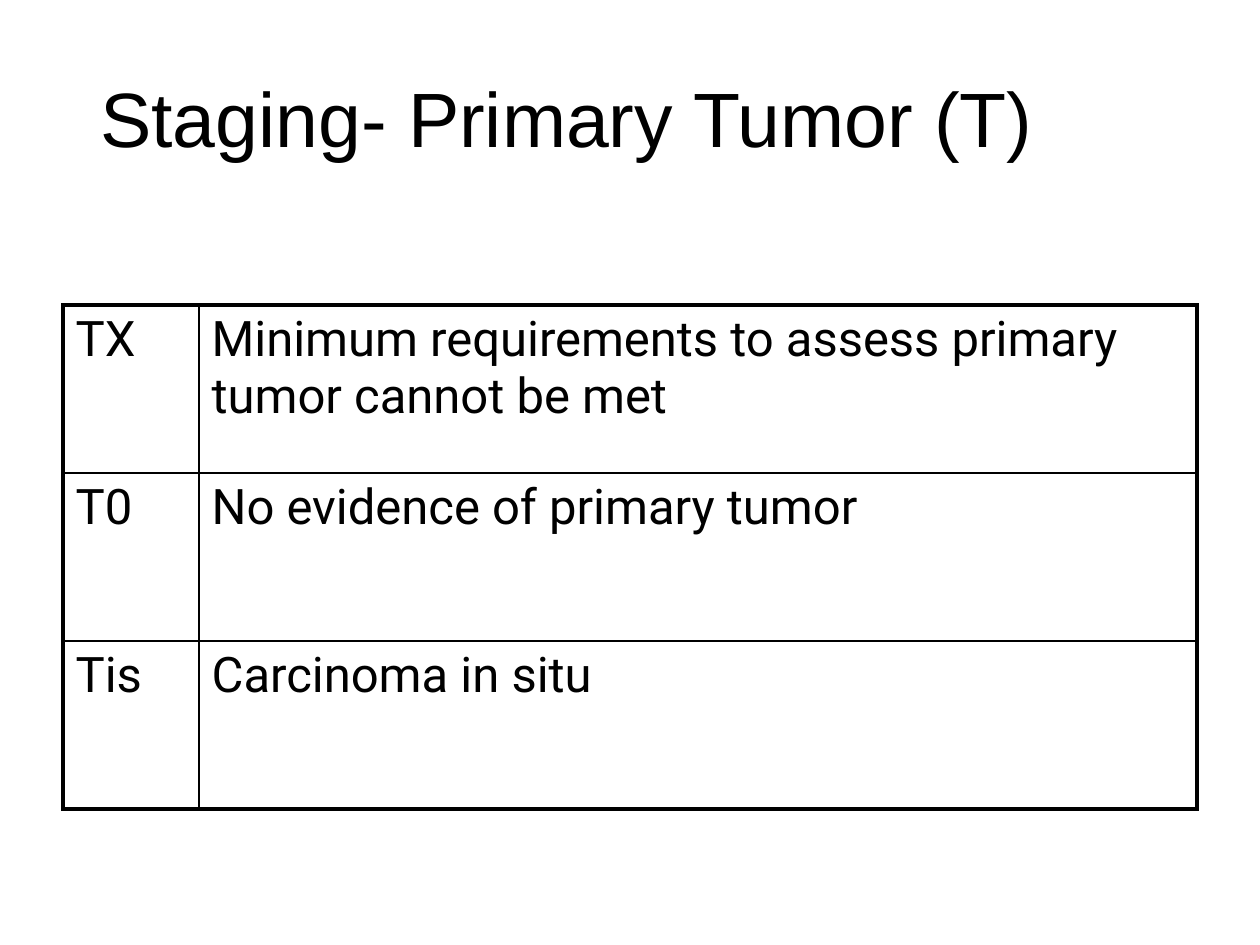
"""Build the slide on primary tumor staging."""
from lxml.etree import SubElement
from pptx import Presentation
from pptx.dml.color import RGBColor
from pptx.enum.text import MSO_ANCHOR as Anchor, PP_ALIGN as Align
from pptx.oxml.ns import qn
from pptx.util import Inches, Pt

INK = "000000"
THICK, THIN = 2.25, 1


def style_font(font, **values):
    for name, value in values.items():
        setattr(font, name, value)
    font.color.rgb = RGBColor.from_string(INK)


def add_border(cell, side, width):
    line = SubElement(cell._tc.get_or_add_tcPr(), qn(f"a:ln{side}"), w=str(Pt(width)))
    SubElement(SubElement(line, qn("a:solidFill")), qn("a:srgbClr"), val=INK)


stages = [
    ("TX", "Minimum requirements to assess primary tumor cannot be met"),
    ("T0", "No evidence of primary tumor"),
    ("Tis", "Carcinoma in situ"),
]

deck = Presentation()
deck.slide_width, deck.slide_height = Inches(10), Inches(7.5)
width, height = deck.slide_width, deck.slide_height
slide = deck.slides.add_slide(deck.slide_layouts[6])

heading = slide.shapes.add_textbox(
    0, int(height * 0.04), int(width * 0.9), int(height / 6)
).text_frame
for name, value in {"word_wrap": True, "vertical_anchor": Anchor.MIDDLE}.items():
    setattr(heading, name, value)
title = heading.paragraphs[0]
title.text, title.alignment = "Staging- Primary Tumor (T)", Align.CENTER
style_font(title.runs[0].font, name="Arial", size=Pt(44))

table_width = int(width * 0.9)
staging = slide.shapes.add_table(
    len(stages), 2, int(width * 0.05), Inches(2.42), table_width, Inches(4)
).table
for flag in ("first_row", "horz_banding"):
    setattr(staging, flag, False)
for column, share in zip(staging.columns, (0.12, 0.88)):
    column.width = int(table_width * share)

last_row = len(stages) - 1
for row, stage in enumerate(stages):
    for col, wording in enumerate(stage):
        cell = staging.cell(row, col)
        cell.text = wording
        style_font(cell.text_frame.paragraphs[0].runs[0].font, name="Roboto", size=Pt(28))
        outer = {"L": col == 0, "R": col == 1, "T": row == 0, "B": row == last_row}
        for side, is_outer in outer.items():
            add_border(cell, side, THICK if is_outer else THIN)
        cell.fill.background()

deck.save("out.pptx")
